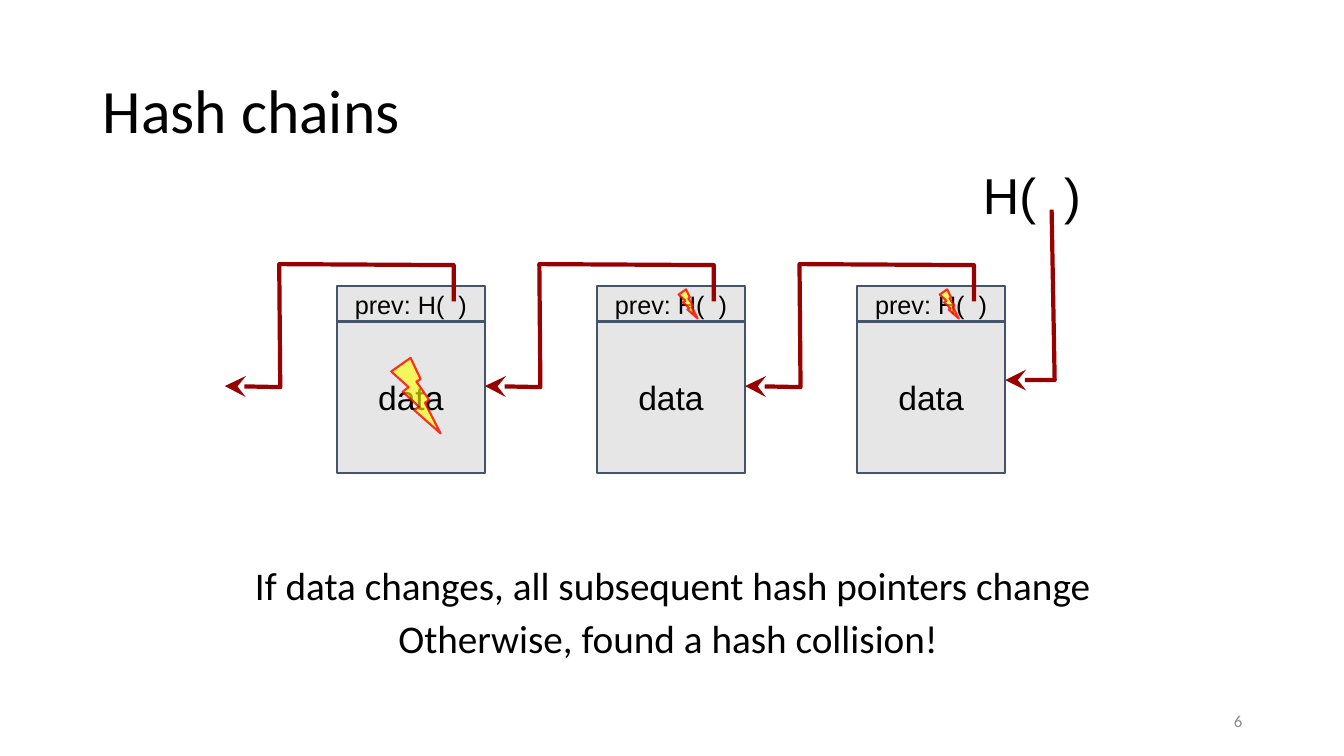
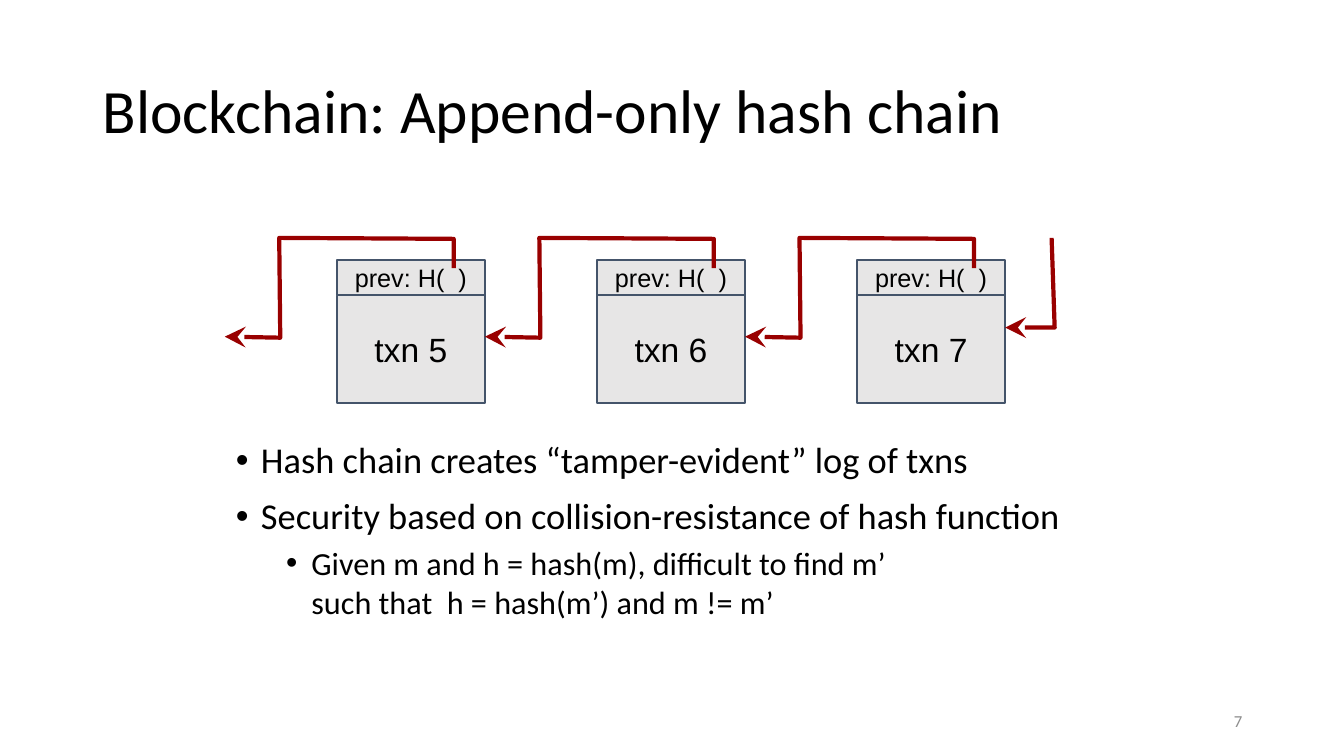
"""Two slides on hash chains: tamper detection and the append-only log."""
from dataclasses import dataclass

from lxml import etree
from pptx import Presentation
from pptx.dml.color import RGBColor
from pptx.enum.shapes import MSO_SHAPE
from pptx.enum.text import MSO_ANCHOR, PP_ALIGN
from pptx.oxml.ns import qn
from pptx.util import Inches, Pt

RECT, BOLT = MSO_SHAPE.RECTANGLE, MSO_SHAPE.LIGHTNING_BOLT
TOP, MID = MSO_ANCHOR.TOP, MSO_ANCHOR.MIDDLE
LEFT, CENTER, RIGHT = PP_ALIGN.LEFT, PP_ALIGN.CENTER, PP_ALIGN.RIGHT


@dataclass(frozen=True)
class Theme:
    """Colours, fonts and sizes of the deck."""
    ink: str = "000000"
    gray: str = "8C8C8C"
    box: str = "E7E6E6"
    edge: str = "44546A"
    arrow: str = "990000"
    spark: str = "FFFF00"
    rim: str = "FF0000"
    sans: str = "Calibri"
    code: str = "Arial"
    title: int = 44
    hash: int = 36
    note: int = 28
    point: int = 26
    data: int = 24
    sub: int = 23
    prev: int = 18
    page: int = 12
    thin: float = 1.5
    thick: int = 3


T = Theme()

NOTE = dict(size=T.note, align=CENTER, line=0.9, before=8)
POINT = dict(size=T.point, line=0.9, before=12, bullet=0.25)
SUB = dict(size=T.sub, before=4, bullet=0.75, level=1)

SLIDES = [
    dict(title="Hash chains", page="6", top=2.84, tall=1.5,
         data=["data", "data", "data"], dip=0.15, land=0.99,
         head=(2.08, 3.77), hash=(9.46, 1.53, 1.55, 0.5),
         bolts=[(3.88, 3.55, 0.49, 0.75), (6.73, 2.87, 0.19, 0.29),
                (9.32, 2.87, 0.19, 0.29)],
         body=(1.67, 5.57, 10, 1.37),
         lines=[("If data changes, all subsequent hash pointers change", NOTE),
                ("Otherwise, found a hash collision! ", NOTE)]),
    dict(title="Blockchain: Append-only hash chain", page="7", top=2.58, tall=1.07,
         data=["txn 5", "txn 6", "txn 7"], dip=0.08, land=0.76,
         head=(2.36, 3.25), hash=None, bolts=[],
         body=(2.24, 4.34, 10.18, 2.42),
         lines=[("Hash chain creates “tamper-evident” log of txns", POINT),
                ("Security based on collision-resistance of hash function", POINT),
                ("Given m and h = hash(m), difficult to find m’\n"
                 "such that  h = hash(m’) and m != m’", SUB)]),
]
PREV, HASH = "prev: H(  )", "H(  )"
FIRST, STEP, WIDE, CAP = 3.34, 2.58, 1.47, 0.35
TITLE, PAGE = (0.92, 0.4, 11.5, 1.45), (9.42, 6.95, 3, 0.4)


def rgb(code):
    """Turn a hex code into a colour."""
    return RGBColor.from_string(code)


def place(shape, at):
    """Move and size a shape."""
    shape.left, shape.top, shape.width, shape.height = map(Inches, at)


def write(para, text, size, font=T.sans, color=T.ink, align=LEFT,
          line=1.0, before=0, bullet=None, level=0):
    """Put formatted text in a paragraph."""
    para.text = text
    para.alignment, para.level = align, level
    para.line_spacing, para.space_before = line, Pt(before)
    for run in para.runs:
        run.font.size, run.font.name = Pt(size), font
        run.font.color.rgb = rgb(color)
    if bullet:
        props = para._p.get_or_add_pPr()
        props.set("marL", str(Inches(bullet)))
        props.set("indent", str(Inches(-0.25)))
        face = etree.SubElement(props, qn("a:buFont"))
        face.set("typeface", "Arial")
        etree.SubElement(props, qn("a:buChar")).set("char", "•")


def fill_in(shape, lines, anchor=TOP, inset=None):
    """Write (text, format) lines into a shape."""
    frame = shape.text_frame
    frame.word_wrap, frame.vertical_anchor = True, anchor
    if inset is not None:
        frame.margin_left = frame.margin_right = Inches(inset)
        frame.margin_top = frame.margin_bottom = Inches(inset)
    for i, (text, form) in enumerate(lines):
        write(frame.add_paragraph() if i else frame.paragraphs[0], text, **form)


def label(slide, at, lines, **form):
    """Add a text box."""
    fill_in(slide.shapes.add_textbox(*map(Inches, at)), lines, **form)


def solid(slide, kind, at, fill, line):
    """Add a filled and outlined preset shape."""
    shape = slide.shapes.add_shape(kind, *map(Inches, at))
    shape.shadow.inherit = False
    shape.fill.solid()
    shape.fill.fore_color.rgb = rgb(fill)
    shape.line.color.rgb = rgb(line)
    shape.line.width = Pt(T.thin)
    return shape


def box(slide, at, text, size):
    """Add one cell of a block."""
    form = dict(size=size, font=T.code, align=CENTER)
    fill_in(solid(slide, RECT, at, T.box, T.edge), [(text, form)], MID, 0.1)


def bolt(slide, at):
    """Add a see-through lightning bolt."""
    shape = solid(slide, BOLT, at, T.spark, T.rim)
    paints = shape._element.spPr.iter(qn("a:srgbClr"))
    for paint, alpha in zip(list(paints), (60, 80)):
        etree.SubElement(paint, qn("a:alpha")).set("val", str(alpha * 1000))


def arrow(slide, dots):
    """Draw an open path with a stealth head at its end."""
    start, *rest = [(Inches(x), Inches(y)) for x, y in dots]
    pen = slide.shapes.build_freeform(*start, scale=1.0)
    pen.add_line_segments(rest, close=False)
    shape = pen.convert_to_shape()
    shape.shadow.inherit = False
    shape.fill.background()
    shape.line.color.rgb = rgb(T.arrow)
    shape.line.width = Pt(T.thick)
    tail = etree.SubElement(shape.line._get_or_add_ln(), qn("a:tailEnd"))
    for key, val in (("type", "stealth"), ("w", "lg"), ("len", "lg")):
        tail.set(key, val)


def chain(slide, item):
    """Draw the blocks, their bolts and their hash pointers."""
    top, land = item["top"], item["top"] + item["land"]
    lefts = [FIRST + STEP * i for i in range(len(item["data"]))]
    for x, text in zip(lefts, item["data"]):
        box(slide, (x, top + CAP, WIDE, item["tall"]), text, T.data)
        box(slide, (x, top, WIDE, CAP), PREV, T.prev)
    if item["hash"]:
        form = dict(size=T.hash, font=T.code, align=CENTER)
        label(slide, item["hash"], [(HASH, form)], inset=0.1)
    for at in item["bolts"]:
        bolt(slide, at)
    for x in lefts:
        arrow(slide, [(x + 1.16, top + item["dip"]), (x + 1.16, top - 0.21),
                      (x - 0.57, top - 0.22), (x - 0.56, land + 0.01),
                      (x + WIDE - STEP, land)])
    high, low = item["head"]
    end = lefts[-1]
    arrow(slide, [(end + 1.93, high), (end + 1.96, low), (end + WIDE, low)])


def main():
    """Build and save the deck."""
    deck = Presentation()
    deck.slide_width, deck.slide_height = Inches(13.33), Inches(7.5)
    for item in SLIDES:
        slide = deck.slides.add_slide(deck.slide_layouts[5])
        title = slide.shapes.title
        place(title, TITLE)
        fill_in(title, [(item["title"], dict(size=T.title, line=0.9))], MID)
        label(slide, item["body"], item["lines"])
        form = dict(size=T.page, color=T.gray, align=RIGHT)
        label(slide, PAGE, [(item["page"], form)], anchor=MID)
        chain(slide, item)
    deck.save("out.pptx")


if __name__ == "__main__":
    main()
